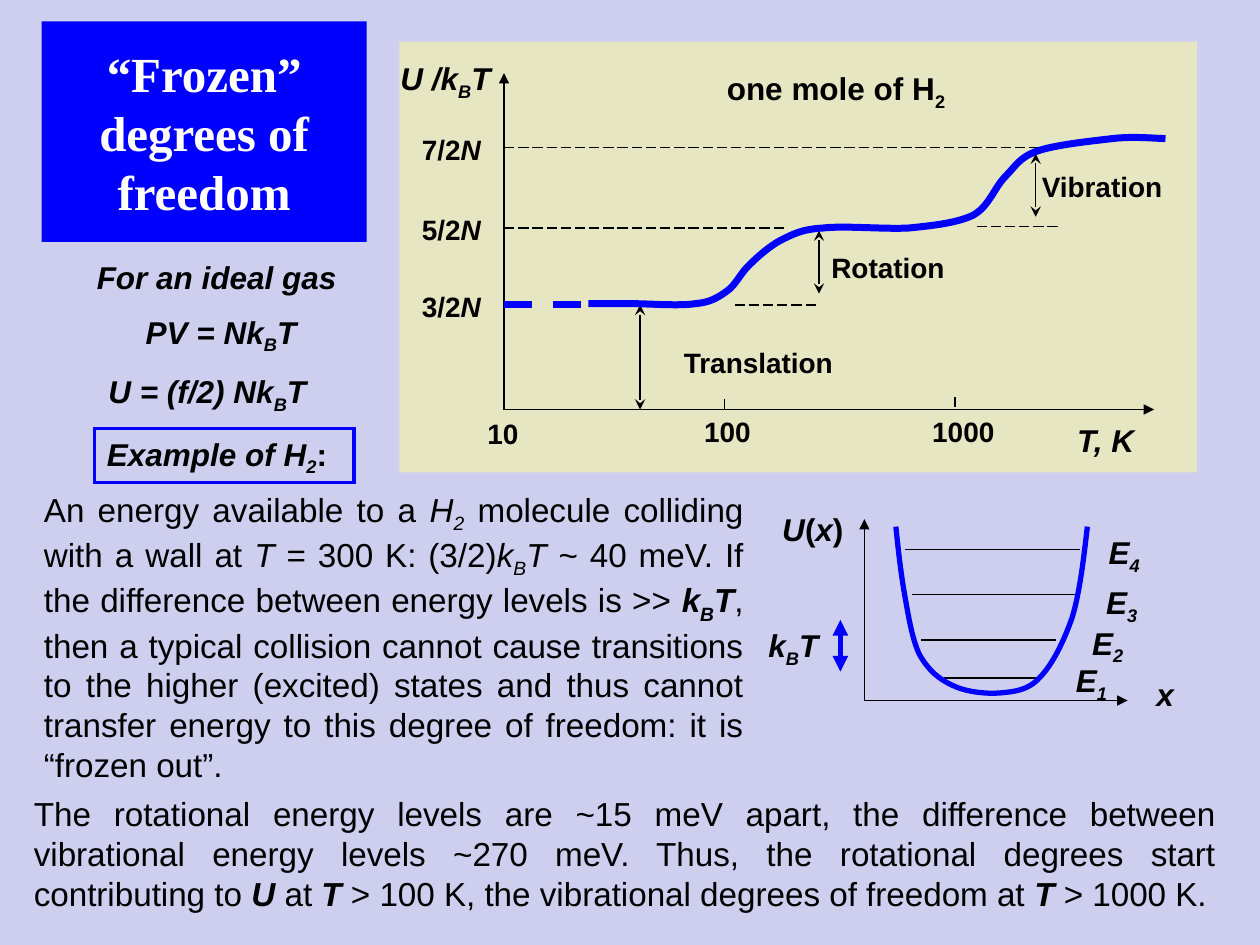
import pptx
import pptx.util
import pptx.dml.color
import pptx.enum.dml
import pptx.enum.shapes
import pptx.enum.text
import pptx.oxml
import pptx.oxml.ns
import lxml.etree

Inches, Pt = pptx.util.Inches, pptx.util.Pt
rgb = pptx.dml.color.RGBColor.from_string
ALIGN = pptx.enum.text.PP_ALIGN
FIT = pptx.enum.text.MSO_AUTO_SIZE
DASH = pptx.enum.dml.MSO_LINE
qn = pptx.oxml.ns.qn
BLACK, BLUE = "000000", "0000FF"

prs = pptx.Presentation()
prs.slide_width, prs.slide_height = Inches(10), Inches(7.5)
s = prs.slides.add_slide(prs.slide_layouts[6])
s.background.fill.solid()
s.background.fill.fore_color.rgb = rgb("CECEEF")


def text(x, y, w, h, size, *paras, align=ALIGN.LEFT, wrap=False, font="Arial", color=BLACK, gap=0):
    sp = s.shapes.add_textbox(Inches(x), Inches(y), Inches(w), Inches(h))
    tf = sp.text_frame
    tf.word_wrap = wrap
    tf.auto_size = FIT.SHAPE_TO_FIT_TEXT
    for n, runs in enumerate(paras):
        p = tf.add_paragraph() if n else tf.paragraphs[0]
        p.alignment = align
        if n:
            p.space_before = Pt(gap)
        for words, style in runs:
            r = p.add_run()
            r.text = words
            r.font.name, r.font.size = font, Pt(size)
            r.font.bold, r.font.italic = "b" in style, "i" in style
            r.font.color.rgb = rgb(color)
            if "_" in style:
                r._r.get_or_add_rPr().set("baseline", "-25000")
    return sp


def line(x1, y1, x2, y2, color=BLACK, width=0.75, dash=None, head=None, tail=None):
    c = s.shapes.add_connector(pptx.enum.shapes.MSO_CONNECTOR.STRAIGHT,
                               Inches(x1), Inches(y1), Inches(x2), Inches(y2))
    c.line.color.rgb = rgb(color)
    c.line.width = Pt(width)
    if dash:
        c.line.dash_style = dash
    for tag, kind in (("a:headEnd", head), ("a:tailEnd", tail)):
        if kind:
            lxml.etree.SubElement(c.line._get_or_add_ln(), qn(tag)).set("type", kind)
    lxml.etree.SubElement(c._element.spPr, qn("a:effectLst"))


title = text(0.33, 0.17, 2.58, 1.75, 28, [("“Frozen” degrees of freedom", "b")],
             align=ALIGN.CENTER, wrap=True, font="Times New Roman", color="FFFFFF")
title.fill.solid()
title.fill.fore_color.rgb = rgb(BLUE)
title.text_frame.auto_size = FIT.NONE
title.text_frame.vertical_anchor = pptx.enum.text.MSO_ANCHOR.MIDDLE

gas = text(0.67, 2, 2.1, 1.27, 18,
           [("For an ideal gas", "bi")],
           [(" ", ""), ("PV = Nk", "bi"), ("B", "bi_"), ("T", "bi")],
           [("U = (f/2) Nk", "bi"), ("B", "bi_"), ("T ", "bi")],
           align=ALIGN.CENTER, gap=9.5)
gas.text_frame.paragraphs[2]._p.get_or_add_pPr().set("marR", str(Inches(0.08)))

panel = s.shapes.add_shape(pptx.enum.shapes.MSO_SHAPE.RECTANGLE,
                           Inches(3.17), Inches(0.33), Inches(6.33), Inches(3.42))
panel.shadow.inherit = False
panel.line.fill.background()
panel.fill.solid()
panel.fill.fore_color.rgb = rgb("FFFF99")
tint = panel._element.spPr.find(qn("a:solidFill"))[0]
lxml.etree.SubElement(tint, qn("a:alpha")).set("val", "50000")

for x1, y1, x2, y2 in [(4, 3.25, 4, 0.58), (3.99, 3.25, 9.16, 3.25),
                       (6.86, 5.56, 6.86, 4.12), (6.86, 5.56, 8.95, 5.56)]:
    line(x1, y1, x2, y2, tail="triangle")
for x1, x2, y in [(4, 6.25, 1.81), (4, 8.25, 1.17), (5.83, 6.5, 2.42), (7.75, 8.42, 1.8)]:
    line(x1, y, x2, y, dash=DASH.LONG_DASH)
for x, y in [(5.75, 3.25), (7.58, 3.23)]:
    line(x, y, x, y - 0.08)
for x1, x2, y in [(7.18, 8.57, 4.36), (7.24, 8.57, 4.72), (7.31, 8.38, 5.08), (7.49, 8.25, 5.38)]:
    line(x1, y, x2, y)
for x, y1, y2 in [(5.08, 2.42, 3.25), (6.5, 1.83, 2.33), (8.22, 1.22, 1.72)]:
    line(x, y1, x, y2, head="stealth", tail="stealth")
line(4, 2.42, 4.67, 2.42, BLUE, 4, DASH.DASH)
line(6.67, 5.33, 6.67, 4.92, BLUE, 3, head="triangle", tail="triangle")

energy_curve = [
    (4.67, 2.41), (4.77, 2.41), (4.86, 2.41), (5.01, 2.41), (5.15, 2.41), (5.39, 2.43), (5.52, 2.41),
    (5.64, 2.4), (5.7, 2.36), (5.77, 2.31), (5.84, 2.26), (5.87, 2.18), (5.94, 2.11),
    (6.01, 2.04), (6.1, 1.96), (6.19, 1.91), (6.29, 1.86), (6.36, 1.82), (6.53, 1.81),
    (6.7, 1.79), (7.01, 1.82), (7.21, 1.81), (7.41, 1.79), (7.59, 1.77), (7.72, 1.71),
    (7.85, 1.64), (7.89, 1.49), (7.98, 1.4), (8.06, 1.32), (8.09, 1.25), (8.23, 1.2),
    (8.37, 1.15), (8.66, 1.12), (8.83, 1.1), (9, 1.08), (9.18, 1.1), (9.25, 1.1)]
potential_well = [
    (7.11, 4.18), (7.13, 4.37), (7.15, 4.55), (7.18, 4.72), (7.21, 4.89), (7.24, 5.08), (7.3, 5.2),
    (7.37, 5.32), (7.45, 5.39), (7.56, 5.44), (7.66, 5.49), (7.82, 5.51), (7.94, 5.5),
    (8.05, 5.49), (8.16, 5.48), (8.25, 5.38), (8.35, 5.28), (8.44, 5.1), (8.51, 4.9),
    (8.57, 4.7), (8.6, 4.44), (8.63, 4.18)]
for knots, width in [(energy_curve, 4), (potential_well, 3)]:
    points = [(Inches(x), Inches(y)) for x, y in knots]
    fb = s.shapes.build_freeform(*points[0])
    fb.add_line_segments(points[1:], close=False)
    curve = fb.convert_to_shape()
    curve.shadow.inherit = False
    curve.fill.background()
    curve.line.color.rgb = rgb(BLUE)
    curve.line.width = Pt(width)
    outline = next(curve._element.iter(qn("a:path")))
    segments = outline.findall(qn("a:lnTo"))
    for n in range(0, len(segments), 3):
        bezier = lxml.etree.SubElement(outline, qn("a:cubicBezTo"))
        for segment in segments[n:n + 3]:
            bezier.append(segment[0])
            outline.remove(segment)

for y, fraction in [(2.25, "3/2"), (1.64, "5/2"), (1, "7/2")]:
    text(3.25, y, 0.67, 0.37, 16, [(fraction, "b"), ("N", "bi")])
for x, y, w, words in [(3.77, 3.26, 0.45, "10"), (5.49, 3.24, 0.57, "100"), (7.3, 3.24, 0.69, "1000"),
                       (5.33, 2.69, 1.4, "Translation"), (6.5, 1.94, 1.1, "Rotation"),
                       (8.17, 1.3, 1.16, "Vibration")]:
    text(x, y, w, 0.37, 16, [(words, "b")])
for x, y, w, runs in [
        (3.08, 0.42, 0.93, [("U /k", "bi"), ("B", "bi_"), ("T", "bi")]),
        (8.45, 3.29, 0.67, [("T, K", "bi")]),
        (5.67, 0.5, 1.95, [("one mole of H", "b"), ("2", "b_")]),
        (9.08, 5.31, 0.34, [("x", "bi")]),
        (6.11, 4, 0.69, [("U", "bi"), ("(", "b"), ("x", "bi"), (")", "b")]),
        (6, 4.92, 0.61, [("k", "bi"), ("B", "bi_"), ("T", "bi")])]:
    text(x, y, w, 0.4, 18, runs)
for n, (x, y) in enumerate([(8.44, 5.2), (8.57, 4.9), (8.68, 4.58), (8.7, 4.18)], 1):
    text(x, y, 0.46, 0.4, 18, [("E", "bi"), (str(n), "bi_")])

example = text(0.75, 3.4, 2.06, 0.43, 18, [("Example of H", "bi"), ("2", "bi_"), (":", "b")])
example.line.color.rgb = rgb(BLUE)
example.line.width = Pt(2)
lxml.etree.SubElement(example.line._get_or_add_ln(), qn("a:miter")).set("lim", "800000")

text(0.25, 3.83, 5.75, 2.31, 19, [
    ("An energy available to a ", ""), ("H", "i"), ("2", "i_"),
    (" molecule colliding with a wall at ", ""), ("T ", "i"), ("= 300 K: (3/2)", ""),
    ("k", "i"), ("B", "i_"), ("T ", "i"),
    ("~ 40 meV. If the difference between energy levels is >> ", ""),
    ("k", "bi"), ("B", "bi_"), ("T", "bi"),
    (", then a typical collision cannot cause transitions to the higher (excited) states and thus "
     "cannot transfer energy to this degree of freedom: it is “frozen out”.", "")],
    align=ALIGN.JUSTIFY, wrap=True)
text(0.17, 6.25, 9.58, 1.05, 19, [
    ("The rotational energy levels are ~15 meV apart, the difference between vibrational energy levels "
     "~270 meV. Thus, the rotational degrees start contributing to ", ""),
    ("U", "bi"), (" at ", ""), ("T ", "bi"),
    ("> 100 K, the vibrational degrees of freedom at ", ""), ("T", "bi"), (" > 1000 K.", "")],
    align=ALIGN.JUSTIFY, wrap=True)

prs.save("out.pptx")
